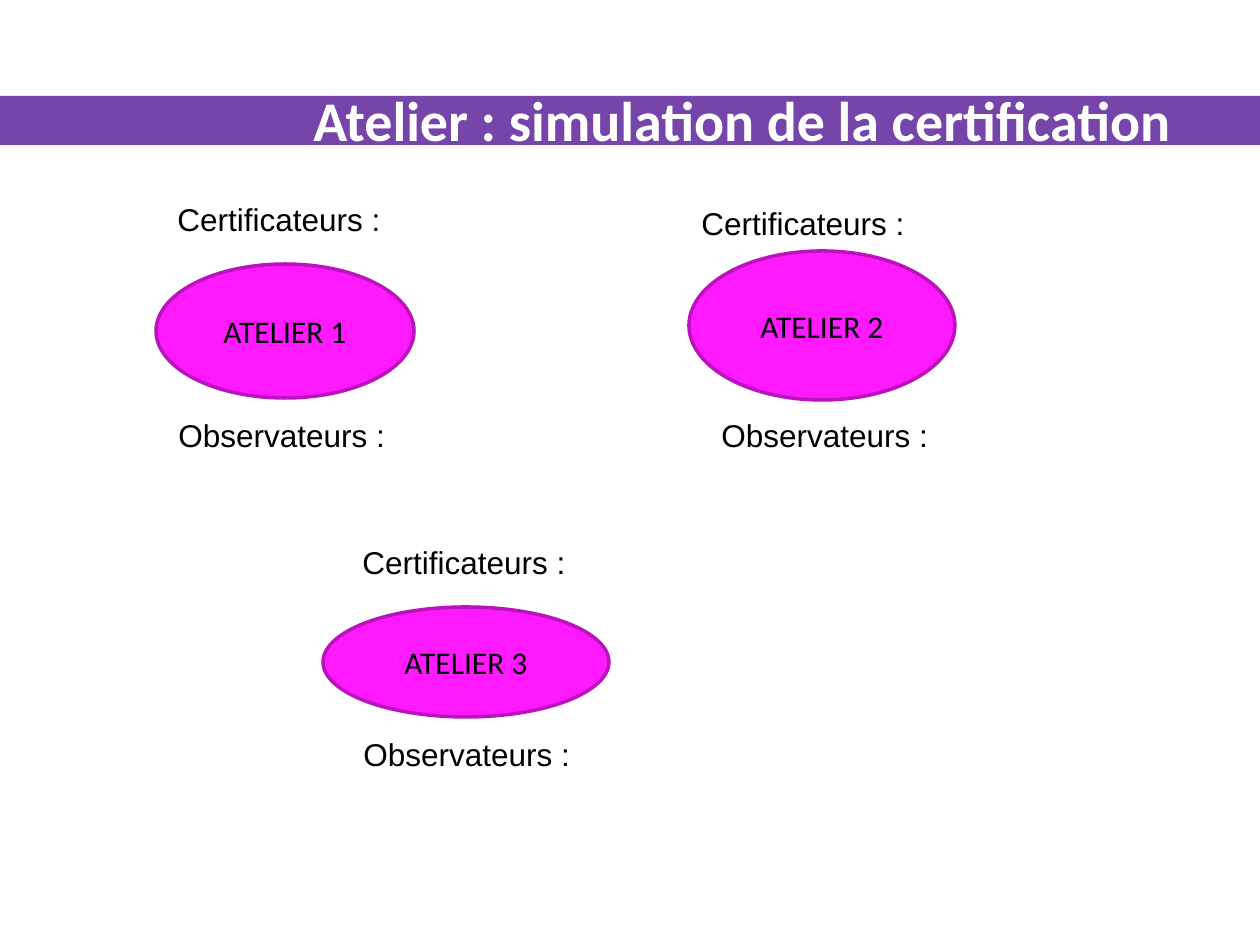
from typing import NamedTuple

from pptx import Presentation
from pptx import util as u
from pptx.dml.color import RGBColor
from pptx.enum import shapes, text

PX = u.Inches(1) / 126
PURPLE = RGBColor(0x75, 0x45, 0xA9)
MAGENTA = RGBColor(0xFE, 0x19, 0xFF)
DARK_MAGENTA = RGBColor(0xBC, 0x12, 0xBD)
BLACK = RGBColor(0, 0, 0)
WHITE = RGBColor(0xFF, 0xFF, 0xFF)


class Box(NamedTuple):
    left: int
    top: int
    width: int
    height: int

    def emu(self) -> list[int]:
        return [round(side * PX) for side in self]


class Workshop(NamedTuple):
    name: str
    oval: Box
    certifiers: Box
    observers: Box


WORKSHOPS = [
    Workshop("ATELIER 1", Box(156, 264, 258, 134),
             Box(165, 194, 231, 50), Box(166, 410, 234, 50)),
    Workshop("ATELIER 2", Box(689, 251, 266, 149),
             Box(689, 198, 231, 50), Box(709, 410, 234, 50)),
    Workshop("ATELIER 3", Box(323, 607, 286, 110),
             Box(350, 537, 231, 50), Box(351, 729, 243, 50)),
]


def write(sp, words: str, font: str, size: int, color: RGBColor,
          align=text.PP_ALIGN.LEFT, anchor=text.MSO_ANCHOR.TOP,
          bold: bool = False) -> None:
    tf = sp.text_frame
    tf.word_wrap = True
    tf.vertical_anchor = anchor
    p = tf.paragraphs[0]
    p.text = words
    p.alignment = align
    p.font.name = font
    p.font.size = u.Pt(size)
    p.font.bold = bold
    p.font.color.rgb = color


def add_filled(s, kind, box: Box, fill: RGBColor):
    sp = s.shapes.add_shape(kind, *box.emu())
    sp.shadow.inherit = False
    sp.fill.solid()
    sp.fill.fore_color.rgb = fill
    return sp


def add_label(s, box: Box, words: str) -> None:
    write(s.shapes.add_textbox(*box.emu()), words, "Arial", 18, BLACK)


def add_workshop(s, workshop: Workshop) -> None:
    sp = add_filled(s, shapes.MSO_SHAPE.OVAL, workshop.oval, MAGENTA)
    sp.line.color.rgb = DARK_MAGENTA
    sp.line.width = u.Pt(2)
    write(sp, workshop.name, "Calibri", 18, BLACK,
          text.PP_ALIGN.CENTER, text.MSO_ANCHOR.MIDDLE)
    add_label(s, workshop.certifiers, "Certificateurs :")
    add_label(s, workshop.observers, "Observateurs :")


def main() -> None:
    prs = Presentation()
    prs.slide_width, prs.slide_height = u.Inches(10), u.Inches(7.5)
    s = prs.slides.add_slide(prs.slide_layouts[6])

    # Title band
    band = add_filled(s, shapes.MSO_SHAPE.RECTANGLE, Box(0, 96, 1260, 49), PURPLE)
    band.line.fill.background()

    # Workshops with their two roles
    for workshop in WORKSHOPS:
        add_workshop(s, workshop)

    # Title
    title = s.shapes.add_textbox(*Box(290, 40, 894, 158).emu())
    write(title, "Atelier : simulation de la certification", "Calibri", 32, WHITE,
          text.PP_ALIGN.RIGHT, text.MSO_ANCHOR.MIDDLE, bold=True)

    prs.save("out.pptx")


if __name__ == "__main__":
    main()
